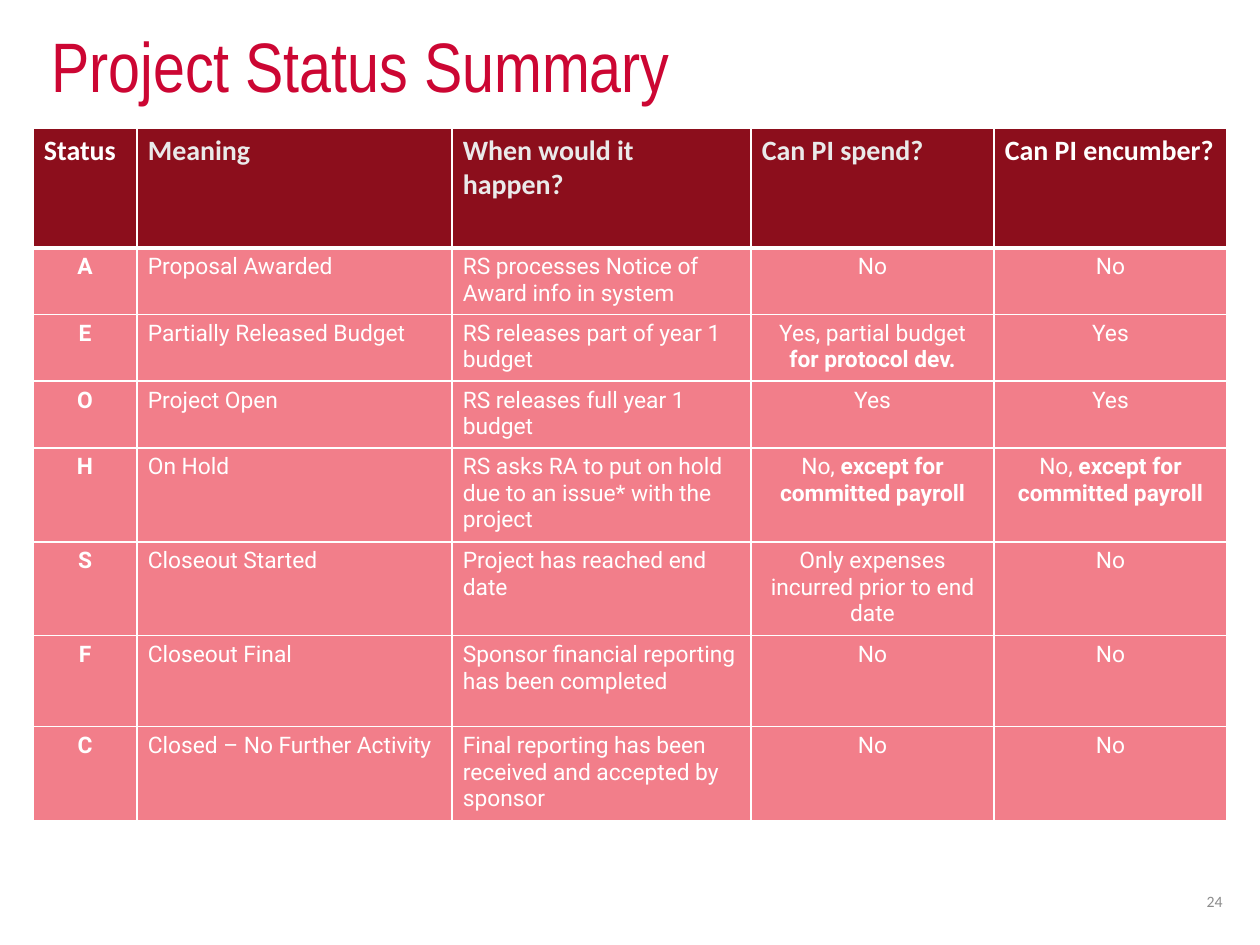
from lxml.etree import SubElement
from pptx import Presentation
from pptx.dml.color import RGBColor
from pptx.enum.text import MSO_ANCHOR as Anchor, PP_ALIGN as Align
from pptx.oxml.ns import qn
from pptx.util import Pt

SCALE = 914400 / 126
WHITE, PALE, GREY = "FFFFFF", "EAEAEA", "8C8C8C"
RED, DARK, PINK = "CC0633", "8C0E1C", "F27E8A"
COLS = [104, 315, 299, 243, 233]
ROWS = [120] + [65] * 3 + [91] * 4
HEAD = ["Status", "Meaning", "When would it happen?", "Can PI spend?", "Can PI encumber?"]
BODY = [
    ["A", "Proposal Awarded", "RS processes Notice of Award info in system", "No", "No"],
    ["E", "Partially Released Budget", "RS releases part of year 1 budget",
     ("Yes, partial budget ", "for protocol dev."), "Yes"],
    ["O", "Project Open", "RS releases full year 1 budget", "Yes", "Yes"],
    ["H", "On Hold", "RS asks RA to put on hold due to an issue* with the project",
     ("No, ", "except for committed payroll"), ("No, ", "except for committed payroll")],
    ["S", "Closeout Started", "Project has reached end date",
     "Only expenses incurred prior to end date", "No"],
    ["F", "Closeout Final", "Sponsor financial reporting has been completed", "No", "No"],
    ["C", "Closed – No Further Activity",
     "Final reporting has been received and accepted by sponsor", "No", "No"],
]


def px(num):
    """Turn pixels into EMU."""
    return round(num * SCALE)


def hue(code):
    """Turn a hex string into a colour."""
    return RGBColor.from_string(code)


def style(para, face, size, color, align=Align.LEFT, bold=False):
    """Set the font and alignment of a paragraph."""
    font = para.font
    font.name, font.size, font.bold = face, Pt(size), bold
    font.color.rgb = hue(color)
    para.alignment = align


def add_text(slide, box, text, *look):
    """Add a text box centred on its height and return its paragraph."""
    frame = slide.shapes.add_textbox(*map(px, box)).text_frame
    frame.word_wrap = True
    frame.vertical_anchor = Anchor.MIDDLE
    para = frame.paragraphs[0]
    para.text = text
    style(para, *look)
    return para


def edge(cell, top, low):
    """Draw white borders, with the top and bottom widths in points."""
    props = cell._tc.get_or_add_tcPr()
    for side, width in zip("LRTB", (1, 1, top, low)):
        line = SubElement(props, qn(f"a:ln{side}"), w=str(Pt(width)))
        fill = SubElement(line, qn("a:solidFill"))
        SubElement(fill, qn("a:srgbClr"), val=WHITE)


def fill_cell(cell, text, color, *look):
    """Fill a cell with colour and text; the second part of a pair is bold."""
    cell.fill.solid()
    cell.fill.fore_color.rgb = hue(color)
    cell.margin_left = cell.margin_right = px(11)
    cell.margin_top = cell.margin_bottom = px(6)
    para = cell.text_frame.paragraphs[0]
    if isinstance(text, tuple):
        for part, bold in zip(text, (False, True)):
            run = para.add_run()
            run.text, run.font.bold = part, bold
    else:
        para.text = text
    style(para, *look)


def add_grid(slide, left, top):
    """Add the status table."""
    size = px(sum(COLS)), px(sum(ROWS))
    grid = slide.shapes.add_table(len(ROWS), len(COLS), px(left), px(top), *size).table
    grid.horz_banding = False
    for col, width in zip(grid.columns, COLS):
        col.width = px(width)
    for row, height in zip(grid.rows, ROWS):
        row.height = px(height)
    for r, texts in enumerate([HEAD] + BODY):
        for c, text in enumerate(texts):
            cell = grid.cell(r, c)
            edge(cell, 3 if r == 1 else 1, 3 if r == 0 else 1)
            if r == 0:
                color = WHITE if c in (0, 4) else PALE
                fill_cell(cell, text, DARK, "Calibri", 16, color, Align.LEFT, True)
            else:
                align = Align.LEFT if c in (1, 2) else Align.CENTER
                fill_cell(cell, text, PINK, "Roboto", 13, WHITE, align, c == 0)


def main():
    """Build and save the slide."""
    deck = Presentation()
    deck.slide_width, deck.slide_height = px(1260), px(945)
    slide = deck.slides.add_slide(deck.slide_layouts[6])
    title = add_text(slide, (39, 28, 1087, 83), "Project Status Summary",
                     "Arial Narrow", 40, RED)
    title.line_spacing = 0.9
    add_grid(slide, 33, 128)
    add_text(slide, (1191, 876, 44, 50), "24", "Calibri", 9, GREY, Align.RIGHT)
    deck.save("out.pptx")


if __name__ == "__main__":
    main()
